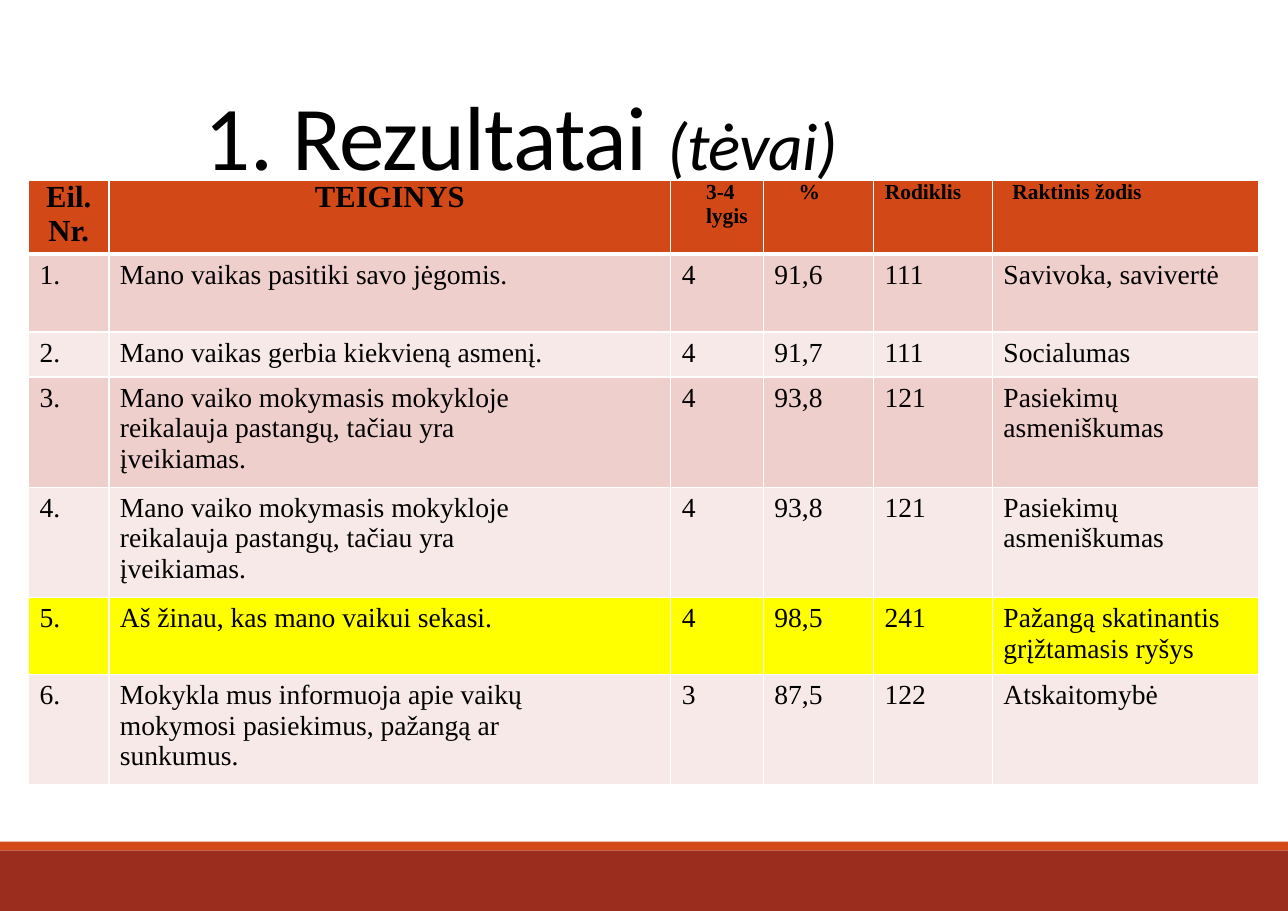
from lxml import etree
from pptx import Presentation
from pptx import util as u
from pptx.dml.color import RGBColor
from pptx.enum import shapes, text
from pptx.oxml.ns import qn

BLACK, WHITE, YELLOW = "000000", "FFFFFF", "FFFF00"
ORANGE, BRICK = "D34817", "9B2D1F"
BANDS = ("EFCFCC", "F7E9E8")
LEFT, CENTER = text.PP_ALIGN.LEFT, text.PP_ALIGN.CENTER

# Shares of the slide, in percent
COLUMNS = (6.24, 43.63, 7.19, 8.55, 9.24, 20.7)
ROWS = (8.01, 8.56, 4.94, 12.07, 12.07, 8.4, 12.07)

# Text, size, alignment, left inset and right inset in inches
HEADERS = (
    ("Eil.\nNr.", 20, CENTER, 0, 0),
    ("TEIGINYS", 20, CENTER, 0, 0),
    ("3-4 lygis", 14, LEFT, 0.32, 0),
    ("%", 14, LEFT, 0.32, 0),
    ("Rodiklis", 14, CENTER, 0, 0.18),
    ("Raktinis žodis", 14, LEFT, 0.18, 0),
)
EFFORT = "Mano vaiko mokymasis mokykloje\nreikalauja pastangų, tačiau yra\nįveikiamas."
STATEMENTS = (
    ("Mano vaikas pasitiki savo jėgomis.", "4", "91,6", "111", "Savivoka, savivertė"),
    ("Mano vaikas gerbia kiekvieną asmenį.", "4", "91,7", "111", "Socialumas"),
    (EFFORT, "4", "93,8", "121", "Pasiekimų\nasmeniškumas"),
    (EFFORT, "4", "93,8", "121", "Pasiekimų\nasmeniškumas"),
    ("Aš žinau, kas mano vaikui sekasi.", "4", "98,5", "241",
     "Pažangą skatinantis\ngrįžtamasis ryšys"),
    ("Mokykla mus informuoja apie vaikų\nmokymosi pasiekimus, pažangą ar\nsunkumus.",
     "3", "87,5", "122", "Atskaitomybė"),
)
HIGHLIGHTED = 5


def color(value):
    return RGBColor.from_string(value)


def add_run(paragraph, words, *, size, font="Times New Roman", bold=False,
            italic=False, spacing=None):
    """Append formatted text; spacing is in hundredths of a point."""
    run = paragraph.add_run()
    run.text = words
    run.font.name, run.font.size = font, u.Pt(size)
    run.font.bold, run.font.italic = bold, italic
    run.font.color.rgb = color(BLACK)
    if spacing is not None:
        run.font._element.set("spc", str(spacing))


def set_border(cell, side, width):
    """Draw a white edge; side is L, R, T or B."""
    line = etree.SubElement(cell._tc.get_or_add_tcPr(), qn(f"a:ln{side}"), w=str(u.Pt(width)))
    fill = etree.SubElement(line, qn("a:solidFill"))
    etree.SubElement(fill, qn("a:srgbClr"), val=WHITE)


class ResultsSlide:
    def __init__(self, presentation):
        self.width, self.height = presentation.slide_width, presentation.slide_height
        self.slide = presentation.slides.add_slide(presentation.slide_layouts[6])

    def across(self, percent):
        return round(self.width * percent / 100)

    def down(self, percent):
        return round(self.height * percent / 100)

    def box(self, left, top, width, height):
        return self.across(left), self.down(top), self.across(width), self.down(height)

    def add_bar(self, top, height, fill):
        bar = self.slide.shapes.add_shape(
            shapes.MSO_SHAPE.RECTANGLE, *self.box(0, top, 100, height))
        bar.shadow.inherit = False
        bar.fill.solid()
        bar.fill.fore_color.rgb = color(fill)
        bar.line.fill.background()

    def add_title(self, title, audience):
        frame = self.slide.shapes.add_textbox(*self.box(15.06, 7.74, 72.03, 22.25)).text_frame
        frame.word_wrap = True
        frame.margin_top = u.Inches(0.08)
        paragraph = frame.paragraphs[0]
        add_run(paragraph, title, size=59.5, font="Calibri", spacing=-50)
        add_run(paragraph, audience, size=44, font="Calibri", italic=True, spacing=-50)

    def fill_cell(self, cell, words, fill, *, size=18, bold=False, align=LEFT,
                  top_width=1, bottom_width=1):
        for side, width in (("L", 1), ("R", 1), ("T", top_width), ("B", bottom_width)):
            set_border(cell, side, width)
        cell.fill.solid()
        cell.fill.fore_color.rgb = color(fill)
        frame = cell.text_frame
        for index, line in enumerate(words.split("\n")):
            paragraph = frame.add_paragraph() if index else frame.paragraphs[0]
            paragraph.alignment = align
            add_run(paragraph, line, size=size, bold=bold)

    def add_results(self, left, top):
        table = self.slide.shapes.add_table(
            len(ROWS), len(COLUMNS), *self.box(left, top, sum(COLUMNS), sum(ROWS))).table
        for column, share in zip(table.columns, COLUMNS):
            column.width = self.across(share)
        for row, share in zip(table.rows, ROWS):
            row.height = self.down(share)

        for column, (words, size, align, inset_left, inset_right) in enumerate(HEADERS):
            cell = table.cell(0, column)
            cell.margin_left, cell.margin_right = u.Inches(inset_left), u.Inches(inset_right)
            cell.margin_top = cell.margin_bottom = 0
            self.fill_cell(cell, words, ORANGE, size=size, bold=True, align=align,
                           bottom_width=3)

        for number, statement in enumerate(STATEMENTS, 1):
            fill = YELLOW if number == HIGHLIGHTED else BANDS[(number - 1) % 2]
            for column, words in enumerate((f"{number}.", *statement)):
                self.fill_cell(table.cell(number, column), words, fill,
                               top_width=3 if number == 1 else 1)


def main():
    presentation = Presentation()
    presentation.slide_width, presentation.slide_height = u.Inches(11.69), u.Inches(8.27)
    results = ResultsSlide(presentation)
    results.add_bar(93.35, 6.65, BRICK)
    results.add_bar(92.38, 0.97, ORANGE)
    results.add_title("1. Rezultatai ", "(tėvai)")
    results.add_results(2.22, 19.83)
    presentation.save("out.pptx")


if __name__ == "__main__":
    main()
